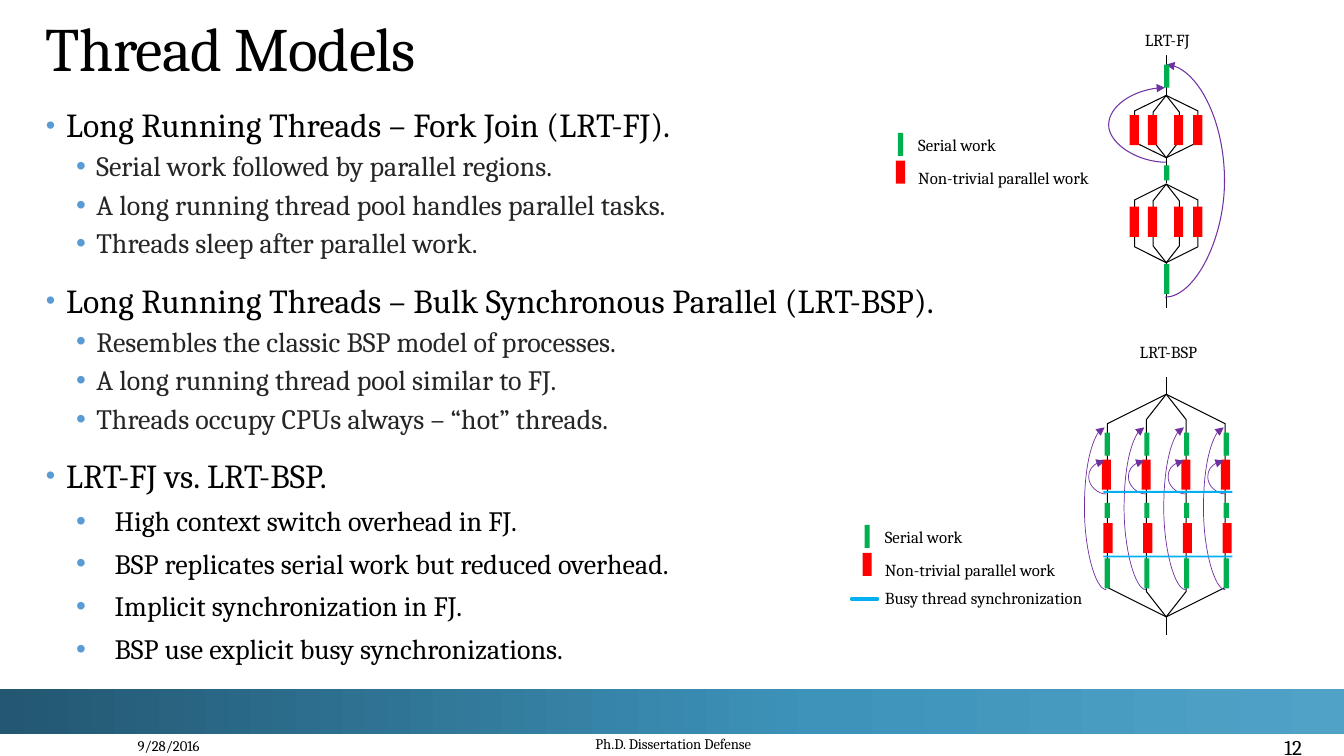
"""Build the Thread Models slide with its fork-join and bulk-synchronous diagrams."""
from copy import deepcopy
from dataclasses import dataclass

from lxml.etree import SubElement
from pptx import Presentation
from pptx.dml.color import RGBColor
from pptx.enum.shapes import MSO_CONNECTOR, MSO_SHAPE
from pptx.enum.text import MSO_ANCHOR, PP_ALIGN
from pptx.oxml.ns import qn
from pptx.util import Cm, Pt

RECTANGLE, HEXAGON = MSO_SHAPE.RECTANGLE, MSO_SHAPE.HEXAGON
STRAIGHT, CURVE = MSO_CONNECTOR.STRAIGHT, MSO_CONNECTOR.CURVE
TOP, MIDDLE, BOTTOM = MSO_ANCHOR.TOP, MSO_ANCHOR.MIDDLE, MSO_ANCHOR.BOTTOM
LEFT, CENTER, RIGHT = PP_ALIGN.LEFT, PP_ALIGN.CENTER, PP_ALIGN.RIGHT


@dataclass(frozen=True)
class Theme:
    """Colours, font and type sizes of the slide."""
    font: str = "Cambria"
    ink: str = "000000"
    soft_ink: str = "262626"
    paper: str = "FFFFFF"
    bullet: str = "5B9BD5"
    serial: str = "00B050"
    parallel: str = "FF0000"
    sync: str = "00B0F0"
    loop: str = "7030A0"
    band: tuple = ((0, "235772"), (0.61, "3D93BA"), (1, "51A2C7"))
    title: float = 44
    heading: float = 24
    body: float = 20
    number: float = 15
    label: float = 12
    footer: float = 10.5


@dataclass(frozen=True)
class Style:
    """Paragraph and run format."""
    size: float
    color: str
    align: int = LEFT
    line: float = 1.0
    before: float = 0
    after: float = 0
    tracking: int = 0
    margin: float = 0
    hanging: float = 0
    bullet_percent: int = 0


@dataclass(frozen=True)
class Frame:
    """Place of a text box, its anchor and its insets."""
    left: float
    top: float
    width: float
    height: float
    anchor: int = TOP
    insets: tuple = (0.25, 0.13, 0.25, 0.13)


@dataclass(frozen=True)
class Section:
    """A heading with its points."""
    top: float
    heading: str
    points: tuple
    style: Style


@dataclass(frozen=True)
class Loop:
    """A curved arrow from its start to its end, swinging out to a bend."""
    start: tuple
    end: tuple
    bend: float
    weight: float


THEME = Theme()
HEADING = Style(THEME.heading, THEME.ink, line=0.95, after=2, tracking=10,
                margin=0.51, hanging=0.51, bullet_percent=80)
POINT = Style(THEME.body, THEME.soft_ink, line=0.9, before=3, after=3,
              margin=1.27, hanging=0.51, bullet_percent=100)
WIDE_POINT = Style(THEME.body, THEME.ink, line=0.9, before=6, after=3,
                   margin=1.73, hanging=0.97, bullet_percent=100)
LABEL = Style(THEME.label, THEME.ink)
SECTIONS = (
    Section(2.57, "Long Running Threads – Fork Join (LRT-FJ).", (
        "Serial work followed by parallel regions.",
        "A long running thread pool handles parallel tasks.",
        "Threads sleep after parallel work."), POINT),
    Section(6.99, "Long Running Threads – Bulk Synchronous Parallel (LRT-BSP).", (
        "Resembles the classic BSP model of processes.",
        "A long running thread pool similar to FJ.",
        "Threads occupy CPUs always – “hot” threads."), POINT),
    Section(11.4, "LRT-FJ vs. LRT-BSP.", (
        "High context switch overhead in FJ.",
        "BSP replicates serial work but reduced overhead.",
        "Implicit synchronization in FJ.",
        "BSP use explicit busy synchronizations."), WIDE_POINT),
)
LEGEND = (("Serial work", 0), ("Non-trivial parallel work", 9),
          ("Busy thread synchronization", 6))
AXIS = 29.39
SERIAL_WIDTH, PARALLEL_WIDTH, PARALLEL_HEIGHT = 0.13, 0.23, 0.76
KEY_HEIGHT, SYNC_HEIGHT = 0.58, 0.05


def add_text(page, frame: Frame, lines: list[tuple[str, Style]]):
    """Add a text box with one paragraph for each line and return it."""
    box = page.shapes.add_textbox(Cm(frame.left), Cm(frame.top), Cm(frame.width), Cm(frame.height))
    text = box.text_frame
    text.word_wrap = True
    text.vertical_anchor = frame.anchor
    text.margin_left, text.margin_top, text.margin_right, text.margin_bottom = map(Cm, frame.insets)
    for index, (words, style) in enumerate(lines):
        para = text.add_paragraph() if index else text.paragraphs[0]
        para.alignment = style.align
        para.line_spacing = style.line
        para.space_before, para.space_after = Pt(style.before), Pt(style.after)
        if style.bullet_percent:
            properties = para._p.get_or_add_pPr()
            properties.set("marL", str(Cm(style.margin)))
            properties.set("indent", str(-Cm(style.hanging)))
            SubElement(SubElement(properties, qn("a:buClr")), qn("a:srgbClr"), val=THEME.bullet)
            SubElement(properties, qn("a:buSzPct"), val=str(style.bullet_percent * 1000))
            SubElement(properties, qn("a:buFont"), typeface="Arial")
            SubElement(properties, qn("a:buChar"), char="•")
        span = para.add_run()
        span.text = words
        span.font.name, span.font.size = THEME.font, Pt(style.size)
        span.font.color.rgb = RGBColor.from_string(style.color)
        if style.tracking:
            span._r.get_or_add_rPr().set("spc", str(style.tracking))
    return box


def add_bar(page, left: float, top: float, width: float, height: float, color: str):
    """Add a plain filled rectangle and return it."""
    bar = page.shapes.add_shape(RECTANGLE, Cm(left), Cm(top), Cm(width), Cm(height))
    bar.shadow.inherit = False
    bar.fill.solid()
    bar.fill.fore_color.rgb = RGBColor.from_string(color)
    bar.line.fill.background()
    return bar


def add_band(page) -> None:
    """Add the gradient band above the footer."""
    band = add_bar(page, 0, 17.37, 33.87, 1.14, THEME.sync)
    band.fill.gradient()
    band.fill.gradient_angle = 0
    stop_list = band._element.spPr.find(qn("a:gradFill")).find(qn("a:gsLst"))
    stop_list.append(deepcopy(stop_list[0]))
    for stop, (position, color) in zip(band.fill.gradient_stops, THEME.band):
        stop.position = position
        stop.color.rgb = RGBColor.from_string(color)


def add_fork(page, middle: float, length: float, widths: tuple, bevels=(0.25, 0.637)) -> None:
    """Add nested upright hexagons whose sides are the thread paths."""
    for width, bevel in zip(widths, bevels):
        fork = page.shapes.add_shape(HEXAGON, Cm(AXIS - length / 2), Cm(middle - width / 2),
                                     Cm(length), Cm(width))
        fork.adjustments[0] = bevel
        fork.rotation = 90
        fork.shadow.inherit = False
        fork.fill.background()
        fork.line.color.rgb = RGBColor.from_string(THEME.ink)
        fork.line.width = Pt(0.75)


def add_link(page, kind: int, start: tuple, end: tuple, color: str, weight: float):
    """Add a connector without shadow and return its shape properties."""
    link = page.shapes.add_connector(kind, *map(Cm, start + end))
    link.line.color.rgb = RGBColor.from_string(color)
    link.line.width = Pt(weight)
    properties = link._element.spPr
    SubElement(properties, qn("a:effectLst"))
    return properties


def add_stems(page, spans: tuple) -> None:
    """Add the vertical lines on the diagram axis."""
    for top, bottom in spans:
        add_link(page, STRAIGHT, (AXIS, top), (AXIS, bottom), THEME.ink, 0.75)


def add_loop(page, loop: Loop) -> None:
    """Add a curved arrow."""
    properties = add_link(page, CURVE, loop.start, loop.end, THEME.loop, loop.weight)
    SubElement(properties.find(qn("a:ln")), qn("a:tailEnd"), type="triangle")
    ratio = (loop.bend - loop.start[0]) / (loop.end[0] - loop.start[0])
    guides = properties.find(qn("a:prstGeom")).get_or_add_avLst()
    SubElement(guides, qn("a:gd"), name="adj1", fmla=f"val {round(ratio * 100000)}")


def add_fork_join(page) -> None:
    """Draw the fork-join diagram."""
    for middle, length, bar_top in ((3.19, 1.57, 2.9), (5.63, 1.98, 5.21)):
        add_fork(page, middle, length, (1.6, 0.66))
        for left in (28.47, 28.93, 29.59, 30.07):
            add_bar(page, left, bar_top, PARALLEL_WIDTH, PARALLEL_HEIGHT, THEME.parallel)
    add_stems(page, ((1.22, 2.44), (3.99, 4.62), (6.63, 7.77)))
    add_loop(page, Loop((AXIS, 4.09), (29.36, 2.21), 27.94, 0.75))
    add_loop(page, Loop((29.36, 7.49), (AXIS, 1.63), 30.86, 0.75))
    for top, height in ((1.63, 0.58), (4.17, 0.38), (6.65, 0.76)):
        add_bar(page, 29.34, top, SERIAL_WIDTH, height, THEME.serial)


def add_bulk_synchronous(page) -> None:
    """Draw the bulk-synchronous diagram, lane by lane."""
    lanes = [27.84 + lane for lane in range(4)]
    add_fork(page, 12.74, 5.61, (2.97, 1))
    add_stems(page, ((9.5, 9.93), (15.54, 16)))
    for lane in lanes:
        for shift, top in ((-0.07, 11.58), (-0.03, 13.18)):
            add_bar(page, lane + shift, top, PARALLEL_WIDTH, PARALLEL_HEIGHT, THEME.parallel)
        for bottom, top, reach in ((12.45, 11.61, 0.4), (14.86, 10.77, 0.51)):
            add_loop(page, Loop((lane + 0.04, bottom), (lane, top), lane - reach, 0.5))
    for top in (12.37, 14):
        add_bar(page, 27.81, top, 3.25, SYNC_HEIGHT, THEME.sync)
    for lane in lanes:
        for top, height in ((10.9, 0.58), (12.67, 0.38), (14.07, 0.76)):
            add_bar(page, lane, top, SERIAL_WIDTH, height, THEME.serial)


def add_legend(page, left: float, top: float, count: int) -> None:
    """Add a legend with the first entries of the key."""
    add_bar(page, left, top, SERIAL_WIDTH, KEY_HEIGHT, THEME.serial)
    add_bar(page, left - 0.05, top + 0.7, PARALLEL_WIDTH, KEY_HEIGHT, THEME.parallel)
    lines = [(words, Style(THEME.label, THEME.ink, before=before))
             for words, before in LEGEND[:count]]
    add_text(page, Frame(left + 0.26, top - 0.09, 8, 0.1 + 0.75 * count), lines)
    if count == len(LEGEND):
        key = add_bar(page, left - 0.33, top + 1.83, 0.66, SYNC_HEIGHT, THEME.sync)
        key.line.color.rgb = RGBColor.from_string(THEME.sync)
        key.line.width = Pt(1.5)


def add_label(page, words: str, left: float, top: float, width: float) -> None:
    """Add a diagram name on a white ground."""
    label = add_text(page, Frame(left, top, width, 0.78), [(words, LABEL)])
    label.fill.solid()
    label.fill.fore_color.rgb = RGBColor.from_string(THEME.paper)


def main() -> None:
    """Build and save the deck."""
    deck = Presentation()
    deck.slide_width, deck.slide_height = Cm(33.87), Cm(19.05)
    page = deck.slides.add_slide(deck.slide_layouts[6])
    add_band(page)
    add_text(page, Frame(0.91, 0.38, 31.93, 1.9, BOTTOM),
             [("Thread Models", Style(THEME.title, THEME.ink, line=0.9, tracking=-50))])
    for section in SECTIONS:
        lines = [(section.heading, HEADING)] + [(words, section.style) for words in section.points]
        add_text(page, Frame(0.91, section.top, 31.93, 13.87), lines)
    add_text(page, Frame(0, 18.29, 5.28, 1.02, MIDDLE),
             [("9/28/2016", Style(THEME.footer, THEME.ink, RIGHT))])
    add_text(page, Frame(11.99, 18.11, 9.96, 1.02, MIDDLE, (0.25, 0.38, 0.25, 0.13)),
             [("Ph.D. Dissertation Defense", Style(THEME.footer, THEME.ink, CENTER))])
    add_text(page, Frame(31.32, 18.29, 2.54, 0.81, MIDDLE, (0.13, 0.25, 0.13, 0)),
             [("12", Style(THEME.number, THEME.ink, CENTER))])
    add_fork_join(page)
    add_bulk_synchronous(page)
    add_legend(page, 22.63, 3.35, 2)
    add_legend(page, 21.79, 13.23, 3)
    add_label(page, "LRT-FJ", 28.6, 0.61, 4.37)
    add_label(page, "LRT-BSP", 28.47, 8.48, 3.07)
    deck.save("out.pptx")


if __name__ == "__main__":
    main()
